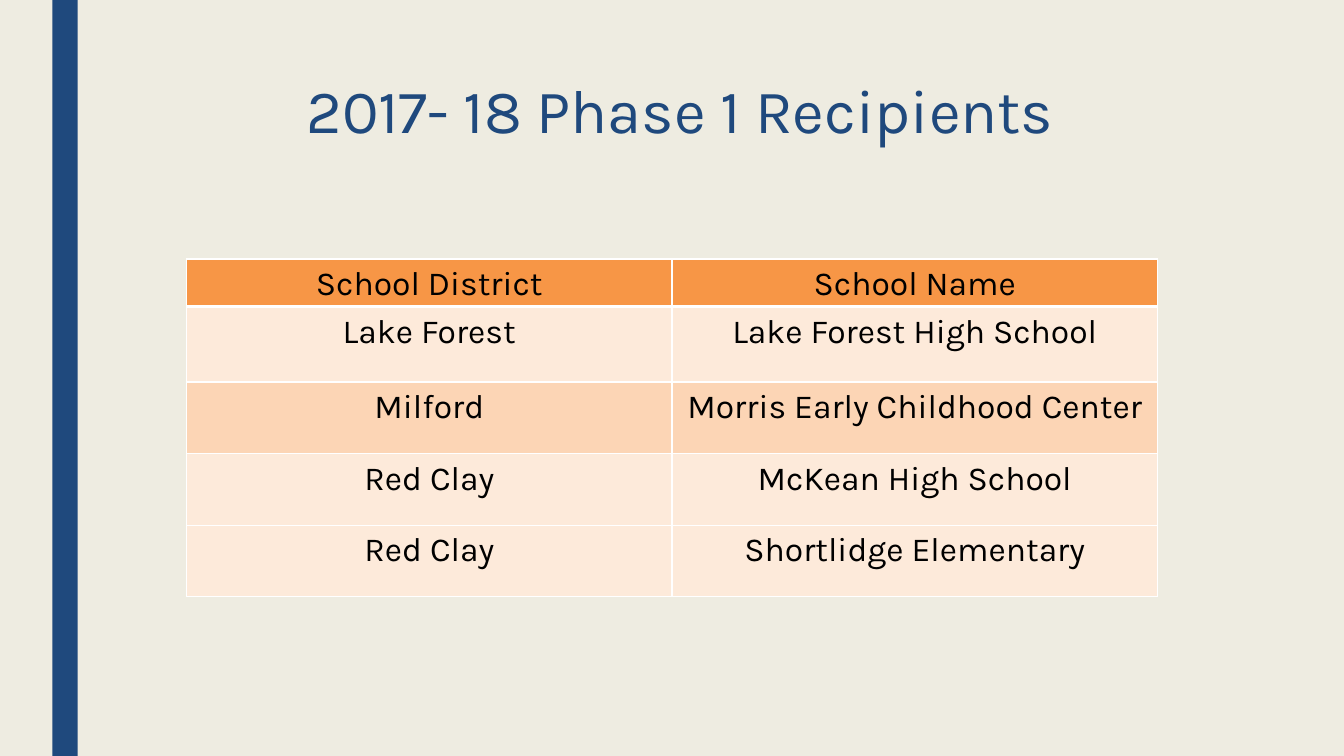
"""Build the slide listing the 2017-18 Phase 1 recipients."""
import dataclasses

import lxml.etree
import pptx
import pptx.dml.color
import pptx.enum.shapes
import pptx.enum.text
import pptx.oxml.ns
import pptx.util

WIDTH, HEIGHT = 13.33, 7.5
FONT = "Karla"
NAVY, CREAM, WHITE, BLACK = "1F497D", "EEECE1", "FFFFFF", "000000"
ORANGE, PALE, PEACH = "F79646", "FDEADA", "FCD5B5"


@dataclasses.dataclass(frozen=True)
class Box:
    """A rectangle in shares of the slide's width and height."""

    left: float
    top: float
    width: float
    height: float

    def place(self) -> tuple[int, int, int, int]:
        """Return left, top, width and height as lengths."""
        return (
            pptx.util.Inches(self.left * WIDTH),
            pptx.util.Inches(self.top * HEIGHT),
            pptx.util.Inches(self.width * WIDTH),
            pptx.util.Inches(self.height * HEIGHT),
        )


@dataclasses.dataclass(frozen=True)
class Recipient:
    """One table row: its wording, height in inches and look."""

    district: str
    school: str
    fill: str = PALE
    height: float = 0.71
    rule_below: float = 1


STRIPE = Box(0.52 / WIDTH, 0, 0.25 / WIDTH, 1)
HEADING = Box(1.5 / WIDTH, 0.1, 10.5 / WIDTH, 1.62 / HEIGHT)
GRID = Box(1.85 / WIDTH, 2.57 / HEIGHT, 9.63 / WIDTH, 3.34 / HEIGHT)
RECIPIENTS = [
    Recipient("School District", "School Name", ORANGE, 0.47, 3),
    Recipient("Lake Forest", "Lake Forest High School", height=0.75),
    Recipient("Milford", "Morris Early Childhood Center", PEACH),
    Recipient("Red Clay", "McKean High School"),
    Recipient("Red Clay", "Shortlidge Elementary"),
]


def paint(fill, colour: str) -> None:
    """Give a fill one solid colour."""
    fill.solid()
    fill.fore_color.rgb = pptx.dml.color.RGBColor.from_string(colour)


def write(frame, wording: str, size: float, colour: str, spacing: float) -> None:
    """Write one centred paragraph."""
    paragraph = frame.paragraphs[0]
    paragraph.alignment = pptx.enum.text.PP_ALIGN.CENTER
    paragraph.line_spacing = spacing
    run = paragraph.add_run()
    run.text = wording
    run.font.name = FONT
    run.font.size = pptx.util.Pt(size)
    paint(run.font.fill, colour)


def add_borders(cell, rule_below: float) -> None:
    """Draw white lines on the four sides of a cell."""
    properties = cell._tc.get_or_add_tcPr()
    sides = {"lnL": 1, "lnR": 1, "lnT": 1, "lnB": rule_below}
    for position, (side, points) in enumerate(sides.items()):
        line = lxml.etree.Element(
            pptx.oxml.ns.qn(f"a:{side}"), w=str(pptx.util.Pt(points))
        )
        solid = lxml.etree.SubElement(line, pptx.oxml.ns.qn("a:solidFill"))
        lxml.etree.SubElement(solid, pptx.oxml.ns.qn("a:srgbClr"), val=WHITE)
        properties.insert(position, line)


def add_stripe(slide) -> None:
    """Draw the vertical band at the left."""
    stripe = slide.shapes.add_shape(
        pptx.enum.shapes.MSO_SHAPE.RECTANGLE, *STRIPE.place()
    )
    stripe.shadow.inherit = False
    paint(stripe.fill, NAVY)
    stripe.line.fill.background()


def add_heading(slide) -> None:
    """Place and write the title."""
    heading = slide.shapes.title
    heading.left, heading.top, heading.width, heading.height = HEADING.place()
    heading.text_frame.word_wrap = True
    heading.text_frame.vertical_anchor = pptx.enum.text.MSO_ANCHOR.TOP
    write(heading.text_frame, "2017- 18 Phase 1 Recipients", 44, NAVY, 0.89)


def add_recipients(slide) -> None:
    """Add the table of districts and schools."""
    table = slide.shapes.add_table(len(RECIPIENTS), 2, *GRID.place()).table
    for row, recipient in zip(table.rows, RECIPIENTS):
        row.height = pptx.util.Inches(recipient.height)
        for cell, wording in zip(row.cells, (recipient.district, recipient.school)):
            cell.margin_left = cell.margin_right = pptx.util.Inches(0.05)
            cell.margin_top = cell.margin_bottom = 0
            paint(cell.fill, recipient.fill)
            add_borders(cell, recipient.rule_below)
            write(cell.text_frame, wording, 24, BLACK, 1.15)


def main() -> None:
    """Build and save the presentation."""
    deck = pptx.Presentation()
    deck.slide_width = pptx.util.Inches(WIDTH)
    deck.slide_height = pptx.util.Inches(HEIGHT)
    slide = deck.slides.add_slide(deck.slide_layouts.get_by_name("Title Only"))
    paint(slide.background.fill, CREAM)
    add_stripe(slide)
    add_heading(slide)
    add_recipients(slide)
    deck.save("out.pptx")


if __name__ == "__main__":
    main()
